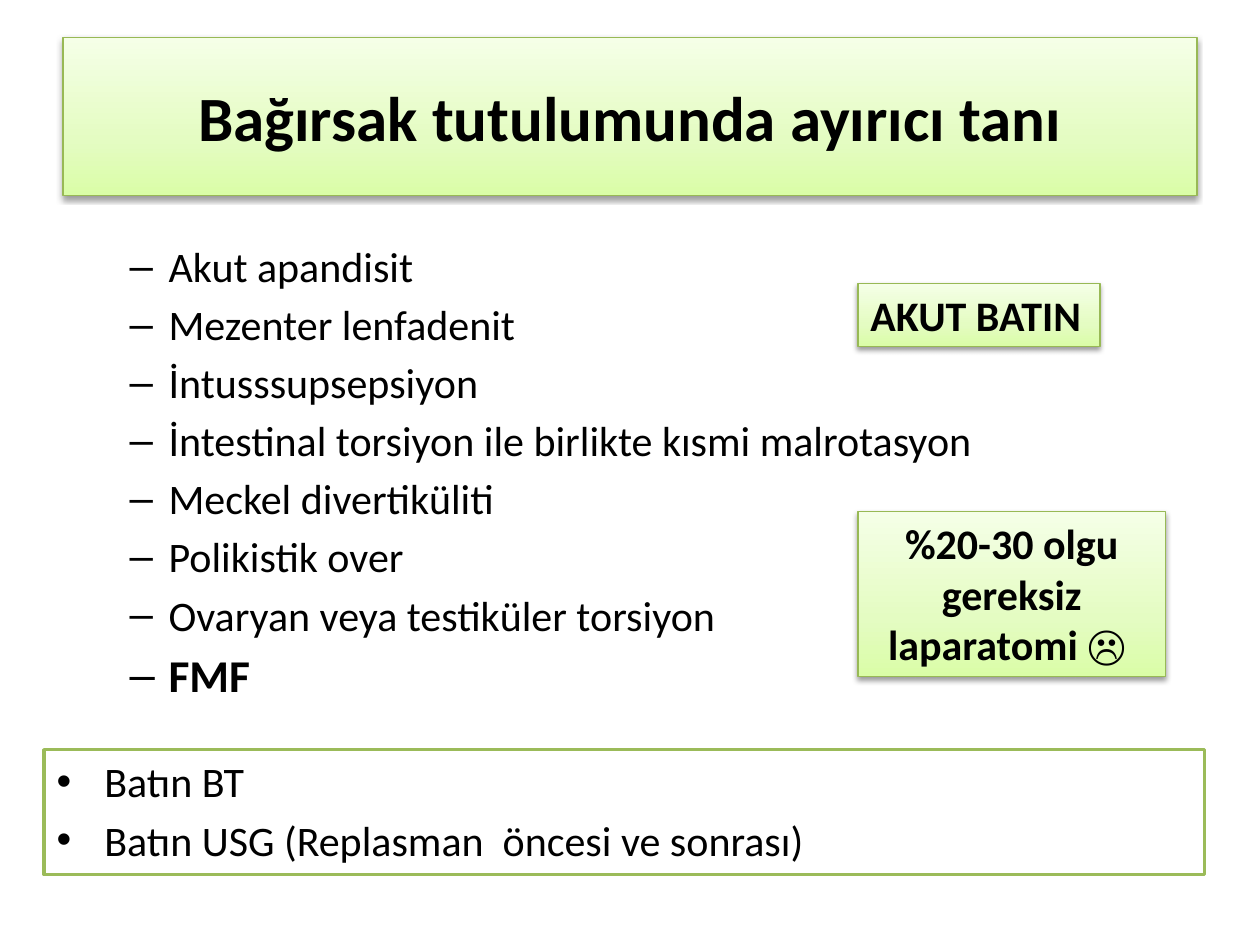
import pptx
import pptx.util
import pptx.dml.color
import pptx.enum.shapes
import pptx.enum.text
import pptx.oxml
import pptx.oxml.ns
import lxml.etree

Inches = pptx.util.Inches
Pt = pptx.util.Pt
RGBColor = pptx.dml.color.RGBColor
ALIGN = pptx.enum.text.PP_ALIGN
ANCHOR = pptx.enum.text.MSO_ANCHOR
qn = pptx.oxml.ns.qn

BLACK = RGBColor(0x00, 0x00, 0x00)
WHITE = RGBColor(0xFF, 0xFF, 0xFF)
GREEN = RGBColor(0x9B, 0xBB, 0x59)
EDGE = RGBColor(0x98, 0xB9, 0x55)
STOPS = [
    (0, RGBColor(0xDA, 0xFD, 0xA7)),
    (35, RGBColor(0xE4, 0xFC, 0xC2)),
    (100, RGBColor(0xF5, 0xFF, 0xE7)),
]
FONT = "Calibri"
CAUSES = [
    "Akut apandisit",
    "Mezenter lenfadenit",
    "İntusssupsepsiyon",
    "İntestinal torsiyon ile birlikte kısmi malrotasyon",
    "Meckel divertiküliti",
    "Polikistik over",
    "Ovaryan veya testiküler torsiyon",
    "FMF",
]
SCANS = ["Batın BT", "Batın USG (Replasman  öncesi ve sonrası)"]


def add_box(slide, box, anchor=ANCHOR.TOP):
    """Add a plain white rectangle without line or shadow."""
    kind = pptx.enum.shapes.MSO_SHAPE.RECTANGLE
    shape = slide.shapes.add_shape(kind, *map(Inches, box))
    shape.shadow.inherit = False
    shape.fill.solid()
    shape.fill.fore_color.rgb = WHITE
    shape.line.fill.background()
    shape.text_frame.word_wrap = True
    shape.text_frame.vertical_anchor = anchor
    return shape


def set_line(shape, color, width):
    """Outline a shape."""
    shape.line.color.rgb = color
    shape.line.width = Pt(width)


def set_font(para, size, bold=False):
    """Style the text of one paragraph."""
    para.font.name = FONT
    para.font.size = Pt(size)
    para.font.bold = bold
    para.font.color.rgb = BLACK


def add_glow(shape):
    """Give a shape the green gradient and a soft shadow below."""
    shape.fill.gradient()
    shape.fill.gradient_angle = 90
    props = shape.fill._xPr
    stops = props.find(".//" + qn("a:gsLst"))
    for stop in list(stops):
        stops.remove(stop)
    for pos, color in STOPS:
        stop = lxml.etree.SubElement(stops, qn("a:gs"), pos=str(pos * 1000))
        lxml.etree.SubElement(stop, qn("a:srgbClr"), val=str(color))
    shadow = lxml.etree.SubElement(
        props.find(qn("a:effectLst")), qn("a:outerShdw"),
        blurRad=str(Pt(3.1)), dist=str(Pt(1.6)), dir="5400000", rotWithShape="0")
    color = lxml.etree.SubElement(shadow, qn("a:srgbClr"), val=str(BLACK))
    lxml.etree.SubElement(color, qn("a:alpha"), val="38000")


def add_panel(slide, box, text, size, align, anchor=ANCHOR.TOP, wrap=True):
    """Add a green panel with bold text."""
    shape = add_box(slide, box, anchor)
    set_line(shape, EDGE, 0.75)
    add_glow(shape)
    shape.text_frame.word_wrap = wrap
    para = shape.text_frame.paragraphs[0]
    para.text = text
    para.alignment = align
    set_font(para, size, True)


def add_list(slide, box, items, mark, left, hang):
    """Add a box of bulleted lines and return it."""
    shape = add_box(slide, box)
    frame = shape.text_frame
    for i, item in enumerate(items):
        para = frame.add_paragraph() if i else frame.paragraphs[0]
        para.text = item
        para.alignment = ALIGN.LEFT
        para.space_before = Pt(4.4)
        set_font(para, 24)
        props = para._p.get_or_add_pPr()
        props.set("marL", str(Inches(left)))
        props.set("indent", str(Inches(-hang)))
        lxml.etree.SubElement(props, qn("a:buFont"), typeface="Arial")
        lxml.etree.SubElement(props, qn("a:buChar"), char=mark)
        fonts = props.find(qn("a:defRPr"))
        if fonts is not None:
            props.append(fonts)
    return shape


def add_causes(slide, box):
    """List the causes, with the last one stressed."""
    shape = add_list(slide, box, CAUSES, "–", 0.81, 0.31)
    set_font(shape.text_frame.paragraphs[-1], 26, True)


def add_scans(slide, box):
    """List the scans in an outlined box."""
    shape = add_list(slide, box, SCANS, "•", 0.38, 0.38)
    set_line(shape, GREEN, 2)


def main():
    """Build the slide and save it."""
    deck = pptx.Presentation()
    deck.slide_width = Inches(10)
    deck.slide_height = Inches(7.5)
    slide = deck.slides.add_slide(deck.slide_layouts[6])
    add_panel(slide, (0.5, 0.3, 9, 1.25), "Bağırsak tutulumunda ayırıcı tanı",
              36, ALIGN.CENTER, ANCHOR.MIDDLE)
    add_causes(slide, (0.43, 1.86, 9.22, 3.86))
    add_panel(slide, (6.81, 2.25, 1.92, 0.5), "AKUT BATIN", 24, ALIGN.LEFT, wrap=False)
    add_scans(slide, (0.35, 5.95, 9.21, 0.99))
    add_panel(slide, (6.81, 4.06, 2.44, 1.31), "%20-30 olgu gereksiz laparatomi ☹ ",
              24, ALIGN.CENTER)
    deck.save("out.pptx")


if __name__ == "__main__":
    main()
